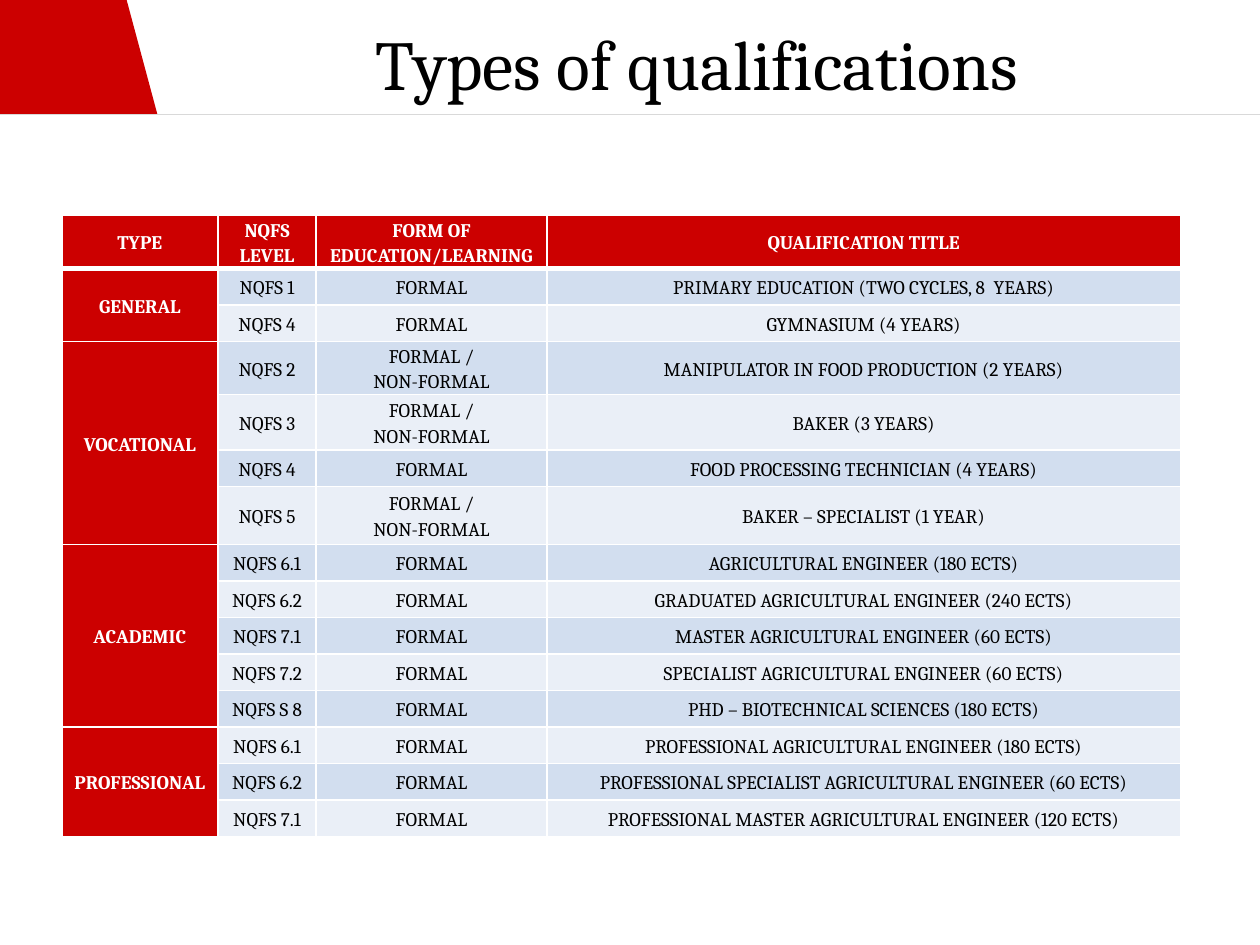
import pptx
import pptx.dml.color
import pptx.enum.shapes
import pptx.enum.text
import pptx.oxml
import pptx.oxml.ns
import pptx.util

Inches, Pt = pptx.util.Inches, pptx.util.Pt
RGBColor = pptx.dml.color.RGBColor
SHAPE = pptx.enum.shapes.MSO_SHAPE
CENTER = pptx.enum.text.PP_ALIGN.CENTER
MIDDLE = pptx.enum.text.MSO_ANCHOR.MIDDLE

RED = RGBColor(0xCC, 0x00, 0x00)
GREY = RGBColor(0xD9, 0xD9, 0xD9)
WHITE = RGBColor(0xFF, 0xFF, 0xFF)
BLACK = RGBColor(0x00, 0x00, 0x00)
BANDS = [RGBColor(0xEA, 0xEF, 0xF7), RGBColor(0xD2, 0xDE, 0xEF)]
FONT = "Cambria"

TITLE = "Types of qualifications"
HEAD = ("TYPE", "NQFS LEVEL", "FORM OF EDUCATION/LEARNING", "QUALIFICATION TITLE")
ONE = "FORMAL"
BOTH = "FORMAL /\nNON-FORMAL"
GROUPS = [
    ("GENERAL", [
        ("NQFS 1", ONE, "PRIMARY EDUCATION (TWO CYCLES, 8  YEARS)"),
        ("NQFS 4", ONE, "GYMNASIUM (4 YEARS)"),
    ]),
    ("VOCATIONAL", [
        ("NQFS 2", BOTH, "MANIPULATOR IN FOOD PRODUCTION (2 YEARS)"),
        ("NQFS 3", BOTH, "BAKER (3 YEARS)"),
        ("NQFS 4", ONE, "FOOD PROCESSING TECHNICIAN (4 YEARS)"),
        ("NQFS 5", BOTH, "BAKER – SPECIALIST (1 YEAR)"),
    ]),
    ("ACADEMIC", [
        ("NQFS 6.1", ONE, "AGRICULTURAL ENGINEER (180 ECTS)"),
        ("NQFS 6.2", ONE, "GRADUATED AGRICULTURAL ENGINEER (240 ECTS)"),
        ("NQFS 7.1", ONE, "MASTER AGRICULTURAL ENGINEER (60 ECTS)"),
        ("NQFS 7.2", ONE, "SPECIALIST AGRICULTURAL ENGINEER (60 ECTS)"),
        ("NQFS S 8", ONE, "PHD – BIOTECHNICAL SCIENCES (180 ECTS)"),
    ]),
    ("PROFESSIONAL", [
        ("NQFS 6.1", ONE, "PROFESSIONAL AGRICULTURAL ENGINEER (180 ECTS)"),
        ("NQFS 6.2", ONE, "PROFESSIONAL SPECIALIST AGRICULTURAL ENGINEER (60 ECTS)"),
        ("NQFS 7.1", ONE, "PROFESSIONAL MASTER AGRICULTURAL ENGINEER (120 ECTS)"),
    ]),
]
WIDTHS = [1.24, 0.78, 1.83, 5.03]
HEIGHTS = [0.39, 0.29, 0.29, 0.42, 0.44, 0.29, 0.46] + [0.29] * 8


def add_run(para, text, size, color, bold=False):
    para.alignment = CENTER
    run = para.add_run()
    run.text = text
    run.font.name = FONT
    run.font.size = Pt(size)
    run.font.bold = bold
    run.font.color.rgb = color


def add_block(slide, kind, left, width):
    block = slide.shapes.add_shape(
        kind, Inches(left), Inches(-0.02), Inches(width), Inches(0.93))
    block.shadow.inherit = False
    block.fill.solid()
    block.fill.fore_color.rgb = RED
    block.line.fill.background()


def add_rule(slide):
    rule = slide.shapes.add_connector(
        pptx.enum.shapes.MSO_CONNECTOR.STRAIGHT,
        Inches(0), Inches(0.91), Inches(10), Inches(0.91))
    rule.line.color.rgb = GREY
    rule.line.width = Pt(0.75)
    pptx.oxml.ns.qn("a:effectLst")
    props = rule.element.spPr
    props.append(props.makeelement(pptx.oxml.ns.qn("a:effectLst"), {}))


def add_title(slide):
    box = slide.shapes.add_textbox(Inches(1.3), Inches(0.22), Inches(8.62), Inches(0.55))
    frame = box.text_frame
    frame.word_wrap = True
    frame.vertical_anchor = MIDDLE
    frame.margin_right = Inches(0.26)
    add_run(frame.paragraphs[0], TITLE, 40, BLACK)


def set_edges(cell, top, base):
    """Draw white cell borders, with the top and bottom widths in points."""
    props = cell._tc.get_or_add_tcPr()
    for side, width in (("L", 1), ("R", 1), ("T", top), ("B", base)):
        props.append(pptx.oxml.parse_xml(
            f'<a:ln{side} {pptx.oxml.ns.nsdecls("a")} w="{Pt(width)}">'
            f'<a:solidFill><a:srgbClr val="{WHITE}"/></a:solidFill></a:ln{side}>'))


def fill_cell(cell, text, row, strong):
    set_edges(cell, 3 if row == 1 else 1, 3 if row == 0 else 1)
    cell.fill.solid()
    cell.fill.fore_color.rgb = RED if strong else BANDS[row % 2]
    cell.vertical_anchor = MIDDLE
    cell.margin_left = cell.margin_right = Inches(0.06)
    cell.margin_top = cell.margin_bottom = 0
    frame = cell.text_frame
    for i, line in enumerate(text.split("\n")):
        para = frame.add_paragraph() if i else frame.paragraphs[0]
        para.line_spacing = 1.15
        para.font.size = Pt(11)
        if line:
            add_run(para, line, 11, WHITE if strong else BLACK, strong)


def add_grid(slide):
    rows = [HEAD]
    spans = []
    for name, items in GROUPS:
        spans.append((len(rows), len(rows) + len(items) - 1))
        rows += [("" if i else name, *item) for i, item in enumerate(items)]
    grid = slide.shapes.add_table(
        len(rows), len(WIDTHS), Inches(0.49), Inches(1.71),
        Inches(sum(WIDTHS)), Inches(sum(HEIGHTS))).table
    for col, width in zip(grid.columns, WIDTHS):
        col.width = Inches(width)
    for row, height in zip(grid.rows, HEIGHTS):
        row.height = Inches(height)
    for r, texts in enumerate(rows):
        for c, text in enumerate(texts):
            fill_cell(grid.cell(r, c), text, r, r == 0 or c == 0)
    for first, last in spans:
        grid.cell(first, 0).merge(grid.cell(last, 0))


def main():
    deck = pptx.Presentation()
    deck.slide_width, deck.slide_height = Inches(10), Inches(7.5)
    slide = deck.slides.add_slide(deck.slide_layouts[6])
    add_block(slide, SHAPE.ISOSCELES_TRIANGLE, 0.75, 0.5)
    add_block(slide, SHAPE.RECTANGLE, 0, 1)
    add_rule(slide)
    add_title(slide)
    add_grid(slide)
    deck.save("out.pptx")


if __name__ == "__main__":
    main()
